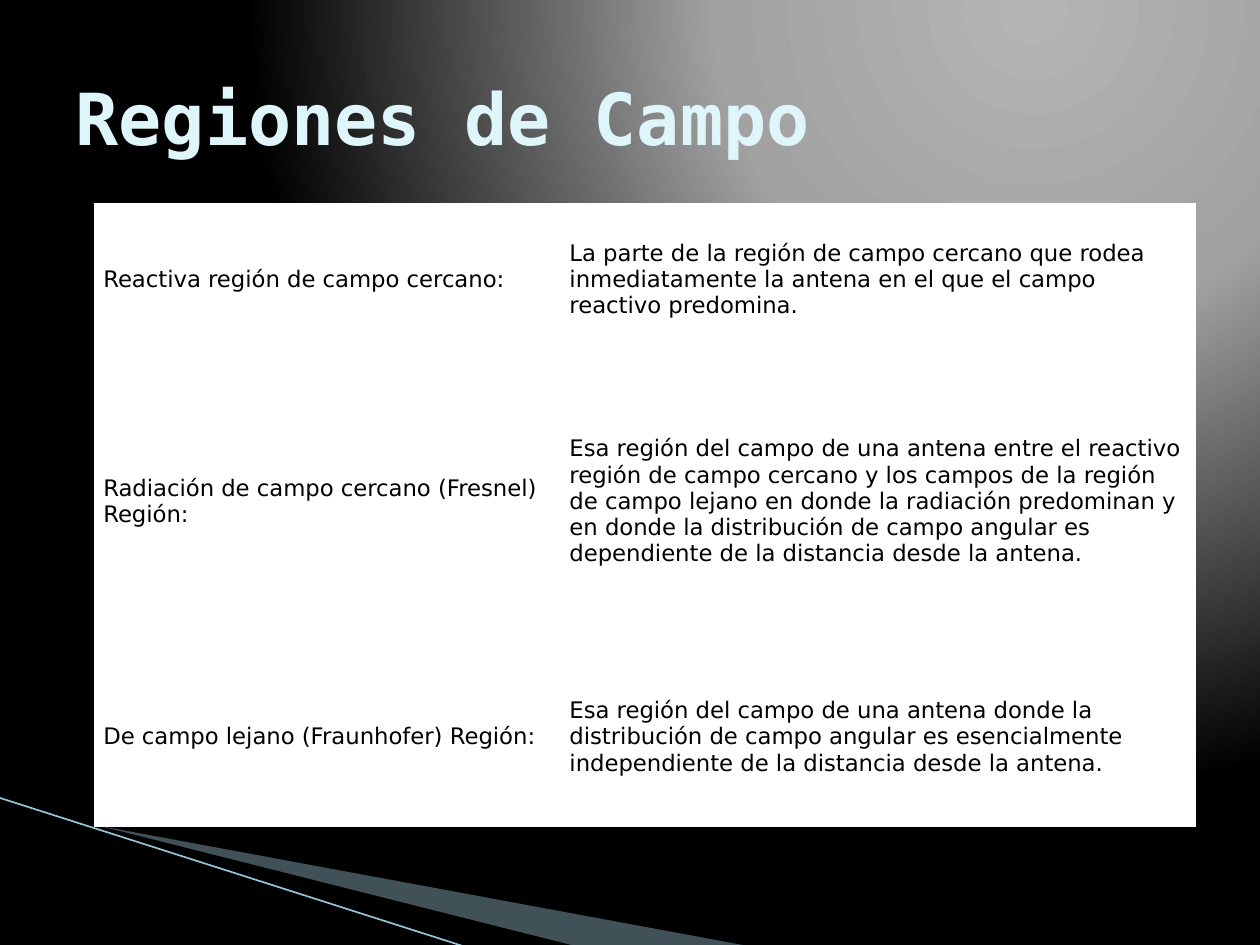
from dataclasses import dataclass
from lxml.etree import SubElement
from pptx import Presentation
from pptx.dml.color import RGBColor
from pptx.enum.shapes import MSO_CONNECTOR
from pptx.enum.text import MSO_ANCHOR, PP_ALIGN
from pptx.oxml import parse_xml
from pptx.oxml.ns import nsdecls, qn
from pptx.util import Inches, Pt


@dataclass(frozen=True)
class Theme:
    heading: str = "DEF5FA"
    ink: str = "000000"
    paper: str = "FFFFFF"
    wedge: str = "A0CBDC"
    stripe: str = "97C5D8"
    glow: tuple = ((0, "B4B4B4"), (40, "A2A2A2"), (100, "000000"))
    heading_font: str = "DejaVu Sans Mono"
    body_font: str = "DejaVu Sans"
    heading_size: int = 41
    body_size: int = 13


theme = Theme()


def write(frame, text, font, size, color, bold=False):
    frame.word_wrap = True
    paragraph = frame.paragraphs[0]
    paragraph.alignment = PP_ALIGN.LEFT
    run = paragraph.add_run()
    run.text = text
    run.font.name = font
    run.font.size = Pt(size)
    run.font.bold = bold
    run.font.color.rgb = RGBColor.from_string(color)


deck = Presentation()
deck.slide_width, deck.slide_height = Inches(10), Inches(7.5)
W, H = deck.slide_width, deck.slide_height
slide = deck.slides.add_slide(deck.slide_layouts[5])

stops = "".join(
    f'<a:gs pos="{share * 1000}"><a:srgbClr val="{color}"/></a:gs>'
    for share, color in theme.glow
)
slide.element.cSld.insert(0, parse_xml(
    f'<p:bg {nsdecls("p", "a")}><p:bgPr><a:gradFill rotWithShape="1">'
    f'<a:gsLst>{stops}</a:gsLst><a:path path="circle">'
    '<a:fillToRect l="65000" t="0" r="0" b="98000"/></a:path>'
    '</a:gradFill><a:effectLst/></p:bgPr></p:bg>'
))

wedges = [
    (theme.wedge, 40, [(0.55, 6.51), (5.95, 7.51), (4.56, 7.51), (0.55, 6.5)]),
    (theme.ink, 100, [(0.53, 6.49), (4.57, 7.51), (3.72, 7.52), (0.54, 6.5)]),
]
for color, opacity, corners in wedges:
    points = [(Inches(x), Inches(y)) for x, y in corners]
    outline = slide.shapes.build_freeform(*points[0])
    outline.add_line_segments(points[1:], close=True)
    wedge = outline.convert_to_shape()
    wedge.shadow.inherit = False
    wedge.fill.solid()
    wedge.fill.fore_color.rgb = RGBColor.from_string(color)
    wedge.line.fill.background()
    if opacity < 100:
        tint = wedge.element.spPr.find(f'{qn("a:solidFill")}/{qn("a:srgbClr")}')
        SubElement(tint, qn("a:alpha"), val=str(opacity * 1000))

stripe = slide.shapes.add_connector(
    MSO_CONNECTOR.STRAIGHT, Inches(-0.01), Inches(6.33), Inches(3.71), Inches(7.52)
)
stripe.line.color.rgb = RGBColor.from_string(theme.stripe)
stripe.line.width = Pt(0.95)
SubElement(stripe.element.spPr, qn("a:effectLst"))

heading = slide.shapes.title
heading.left, heading.top = int(W * 0.05), int(H * 0.04)
heading.width, heading.height = int(W * 0.9), Inches(1.25)
heading.text_frame.vertical_anchor = MSO_ANCHOR.MIDDLE
write(heading.text_frame, "Regiones de Campo", font=theme.heading_font,
      size=theme.heading_size, color=theme.heading, bold=True)

regions = [
    ("Reactiva región de campo cercano:",
     "La parte de la región de campo cercano que rodea inmediatamente la antena "
     "en el que el campo reactivo predomina."),
    ("Radiación de campo cercano (Fresnel) Región:",
     "Esa región del campo de una antena entre el reactivo región de campo cercano "
     "y los campos de la región de campo lejano en donde la radiación predominan y "
     "en donde la distribución de campo angular es dependiente de la distancia "
     "desde la antena."),
    ("De campo lejano (Fraunhofer) Región:",
     "Esa región del campo de una antena donde la distribución de campo angular es "
     "esencialmente independiente de la distancia desde la antena."),
]
column_widths = [3.7, 5.04]
row_heights = [1.2, 2.32, 1.42]

definitions = slide.shapes.add_table(
    len(regions), len(column_widths), Inches(0.75), Inches(1.62),
    Inches(sum(column_widths)), Inches(sum(row_heights)),
).table
definitions.first_row = definitions.horz_banding = False
for column, width in zip(definitions.columns, column_widths):
    column.width = Inches(width)
for row, height, entries in zip(definitions.rows, row_heights, regions):
    row.height = Inches(height)
    for cell, entry in zip(row.cells, entries):
        cell.fill.solid()
        cell.fill.fore_color.rgb = RGBColor.from_string(theme.paper)
        cell.vertical_anchor = MSO_ANCHOR.MIDDLE
        cell.margin_left = cell.margin_right = Inches(0.07)
        cell.margin_top = cell.margin_bottom = Inches(0.04)
        write(cell.text_frame, entry, font=theme.body_font,
              size=theme.body_size, color=theme.ink)

deck.save("out.pptx")
